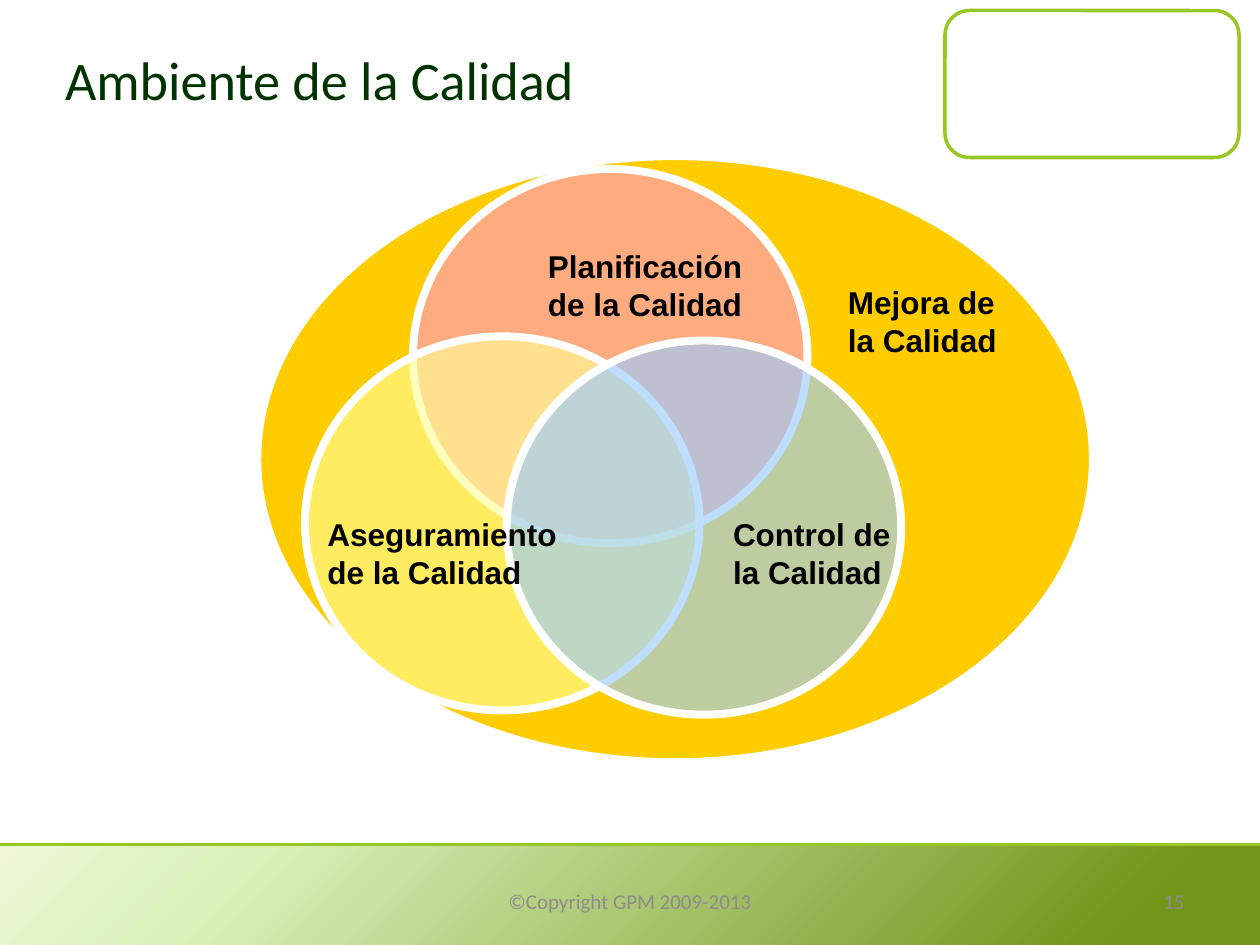
from copy import deepcopy
from dataclasses import dataclass

from lxml import etree
from pptx import Presentation
from pptx.dml.color import RGBColor
from pptx.enum.shapes import MSO_CONNECTOR, MSO_SHAPE
from pptx.enum.text import MSO_ANCHOR, PP_ALIGN
from pptx.oxml.ns import qn
from pptx.util import Pt

ELLIPSE = MSO_SHAPE.OVAL
RECTANGLE = MSO_SHAPE.RECTANGLE
ROUNDED = MSO_SHAPE.ROUNDED_RECTANGLE
STRAIGHT = MSO_CONNECTOR.STRAIGHT
TOP, MIDDLE = MSO_ANCHOR.TOP, MSO_ANCHOR.MIDDLE
LEFT, CENTER, RIGHT = PP_ALIGN.LEFT, PP_ALIGN.CENTER, PP_ALIGN.RIGHT


@dataclass(frozen=True)
class Theme:
    white: str = "FFFFFF"
    black: str = "000000"
    green: str = "98C723"
    title: str = "003300"
    footer: str = "8C8C8C"
    improvement: str = "FFCC00"
    planning: str = "FF99CC"
    assurance: str = "FFFF99"
    control: str = "99CCFF"
    band: tuple = ((0, "EEF8D5"), (0.19, "DAF2BC"), (0.89, "72951A"))
    heading_font: str = "Calibri"
    label_font: str = "Arial"
    title_size: int = 31
    label_size: int = 18
    footer_size: int = 12


def write_text(frame, text, *, font, size, color, bold=False, align=LEFT, anchor=TOP):
    frame.word_wrap = True
    frame.vertical_anchor = anchor
    paragraph = frame.paragraphs[0]
    paragraph.alignment = align
    run = paragraph.add_run()
    run.text = text
    run.font.name = font
    run.font.size = Pt(size)
    run.font.bold = bold
    run.font.color.rgb = RGBColor.from_string(color)


class SlideBuilder:
    def __init__(self, slide, theme):
        self.slide = slide
        self.theme = theme

    def title(self, text, box):
        shape = self.slide.shapes.title
        shape.left, shape.top, shape.width, shape.height = map(Pt, box)
        write_text(shape.text_frame, text, font=self.theme.heading_font,
                   size=self.theme.title_size, color=self.theme.title, anchor=MIDDLE)

    def shape(self, kind, box, fill, line=None, width=0, opacity=None):
        shape = self.slide.shapes.add_shape(kind, *map(Pt, box))
        shape.shadow.inherit = False
        shape.fill.solid()
        shape.fill.fore_color.rgb = RGBColor.from_string(fill)
        if line:
            shape.line.color.rgb = RGBColor.from_string(line)
            shape.line.width = Pt(width)
        else:
            shape.line.fill.background()
        if opacity:
            color = shape._element.spPr.find(qn("a:solidFill"))[0]
            etree.SubElement(color, qn("a:alpha"), val=str(opacity * 1000))
        return shape

    def gradient_band(self, box):
        shape = self.shape(RECTANGLE, box, self.theme.white)
        shape.fill.gradient()
        shape.fill.gradient_angle = 315
        stops = shape._element.spPr.find(qn("a:gradFill")).find(qn("a:gsLst"))
        stops.append(deepcopy(stops[-1]))
        for stop, (position, color) in zip(shape.fill.gradient_stops, self.theme.band):
            stop.position = position
            stop.color.rgb = RGBColor.from_string(color)

    def rule(self, left, right, top):
        connector = self.slide.shapes.add_connector(
            STRAIGHT, Pt(left), Pt(top), Pt(right), Pt(top))
        connector.line.color.rgb = RGBColor.from_string(self.theme.green)
        connector.line.width = Pt(1.5)
        etree.SubElement(connector._element.spPr, qn("a:effectLst"))

    def text(self, text, box, **style):
        shape = self.slide.shapes.add_textbox(*map(Pt, box))
        write_text(shape.text_frame, text, **style)

    def label(self, text, left, top, width):
        self.text(text, (left, top, width, 51), font=self.theme.label_font,
                  size=self.theme.label_size, color=self.theme.black, bold=True)

    def footer(self, text, left, width, align):
        self.text(text, (left, 500.4, width, 28.8), font=self.theme.heading_font,
                  size=self.theme.footer_size, color=self.theme.footer,
                  align=align, anchor=MIDDLE)


def main():
    theme = Theme()
    presentation = Presentation()
    presentation.slide_width, presentation.slide_height = Pt(720), Pt(540)
    slide = presentation.slides.add_slide(presentation.slide_layouts[5])
    builder = SlideBuilder(slide, theme)

    builder.shape(ROUNDED, (540, 6, 168, 84), theme.white, theme.green, 2)
    builder.gradient_band((0, 483, 720, 57))
    builder.rule(0, 720, 482.4)
    builder.title("Ambiente de la Calidad", (30, 0, 486, 90))

    builder.shape(ELLIPSE, (147.8, 90, 476, 344.8), theme.improvement, theme.white, 3)
    for left, top, color in (
        (236, 96.6, theme.planning),
        (174.3, 192.2, theme.assurance),
        (289.6, 194.6, theme.control),
    ):
        builder.shape(ELLIPSE, (left, top, 225.4, 213.8), color, theme.white, 4.5, 63)

    for text, left, top, width in (
        ("Planificación de la Calidad", 306, 137.5, 126),
        ("Aseguramiento de la Calidad", 180, 291, 156),
        ("Control de la Calidad", 411.8, 291, 110),
        ("Mejora de la Calidad", 477.4, 158.4, 116.6),
    ):
        builder.label(text, left, top, width)

    builder.footer("©Copyright GPM 2009-2013", 246, 228, CENTER)
    builder.footer("15", 516, 168, RIGHT)
    presentation.save("out.pptx")


if __name__ == "__main__":
    main()
